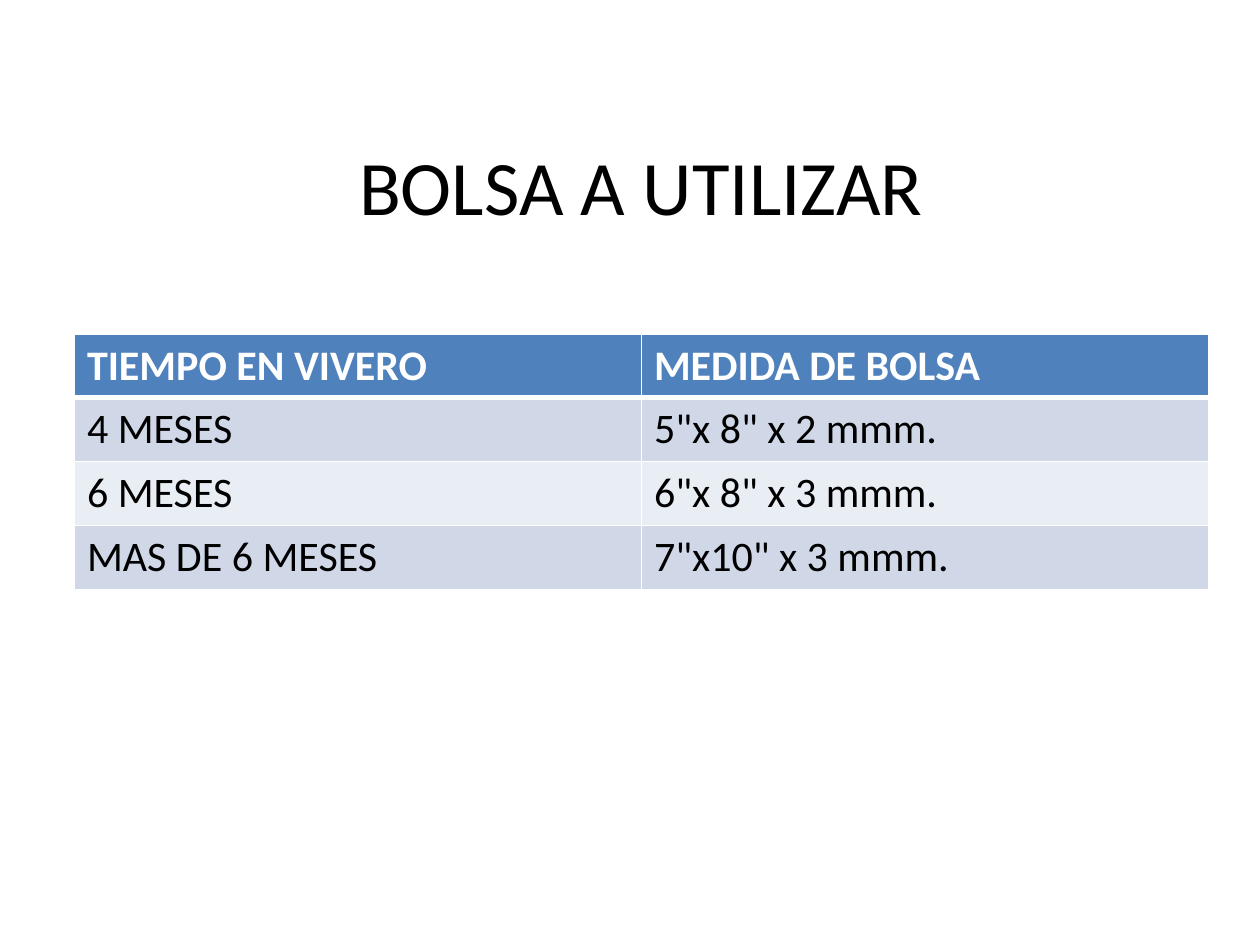
from lxml import etree
from pptx import Presentation
from pptx.dml.color import RGBColor
from pptx.enum.text import MSO_ANCHOR, PP_ALIGN
from pptx.oxml.ns import qn
from pptx.util import Cm, Pt

MIDDLE = MSO_ANCHOR.MIDDLE
CENTER = PP_ALIGN.CENTER
FONT = "Calibri"
WHITE, BLACK, BLUE = "FFFFFF", "000000", "4F81BD"
BANDS = ["D0D8E8", "E9EDF4"]

TITLE = "BOLSA A UTILIZAR"
ROWS = [
    ("TIEMPO EN VIVERO", "MEDIDA DE BOLSA"),
    ("4 MESES", '5"x 8" x 2 mmm.'),
    ("6 MESES", '6"x 8" x 3 mmm.'),
    ("MAS DE 6 MESES", '7"x10" x 3 mmm.'),
]
LEFT, WIDTH = 1.5, 22.86
ROW_H = 1.27


def color(code):
    return RGBColor.from_string(code)


def style(par, size, code, bold=False):
    for run in par.runs:
        font = run.font
        font.name, font.size, font.bold = FONT, Pt(size), bold
        font.color.rgb = color(code)


def border(cell, side, width):
    props = cell._tc.get_or_add_tcPr()
    line = etree.SubElement(props, qn(f"a:ln{side}"), w=str(Pt(width)))
    fill = etree.SubElement(line, qn("a:solidFill"))
    etree.SubElement(fill, qn("a:srgbClr"), val=WHITE)


def add_title(slide):
    title = slide.shapes.title
    title.left, title.top = Cm(LEFT), Cm(2.13)
    title.width, title.height = Cm(WIDTH), Cm(3.18)
    frame = title.text_frame
    frame.text = TITLE
    frame.word_wrap = True
    frame.vertical_anchor = MIDDLE
    par = frame.paragraphs[0]
    par.alignment = CENTER
    style(par, 44, BLACK)


def add_grid(slide):
    table = slide.shapes.add_table(
        len(ROWS), len(ROWS[0]), Cm(LEFT), Cm(6.73),
        Cm(WIDTH), Cm(ROW_H * len(ROWS))).table
    for r, row in enumerate(ROWS):
        head = r == 0
        for c, text in enumerate(row):
            cell = table.cell(r, c)
            cell.text = text
            style(cell.text_frame.paragraphs[0], 24,
                  WHITE if head else BLACK, head)
            widths = {"L": 1, "R": 1, "T": 3 if r == 1 else 1,
                      "B": 3 if head else 1}
            for side, width in widths.items():
                border(cell, side, width)
            cell.fill.solid()
            cell.fill.fore_color.rgb = color(
                BLUE if head else BANDS[(r - 1) % 2])


def main():
    deck = Presentation()
    deck.slide_width, deck.slide_height = Cm(25.4), Cm(19.05)
    slide = deck.slides.add_slide(deck.slide_layouts[5])
    add_title(slide)
    add_grid(slide)
    deck.save("out.pptx")


if __name__ == "__main__":
    main()
